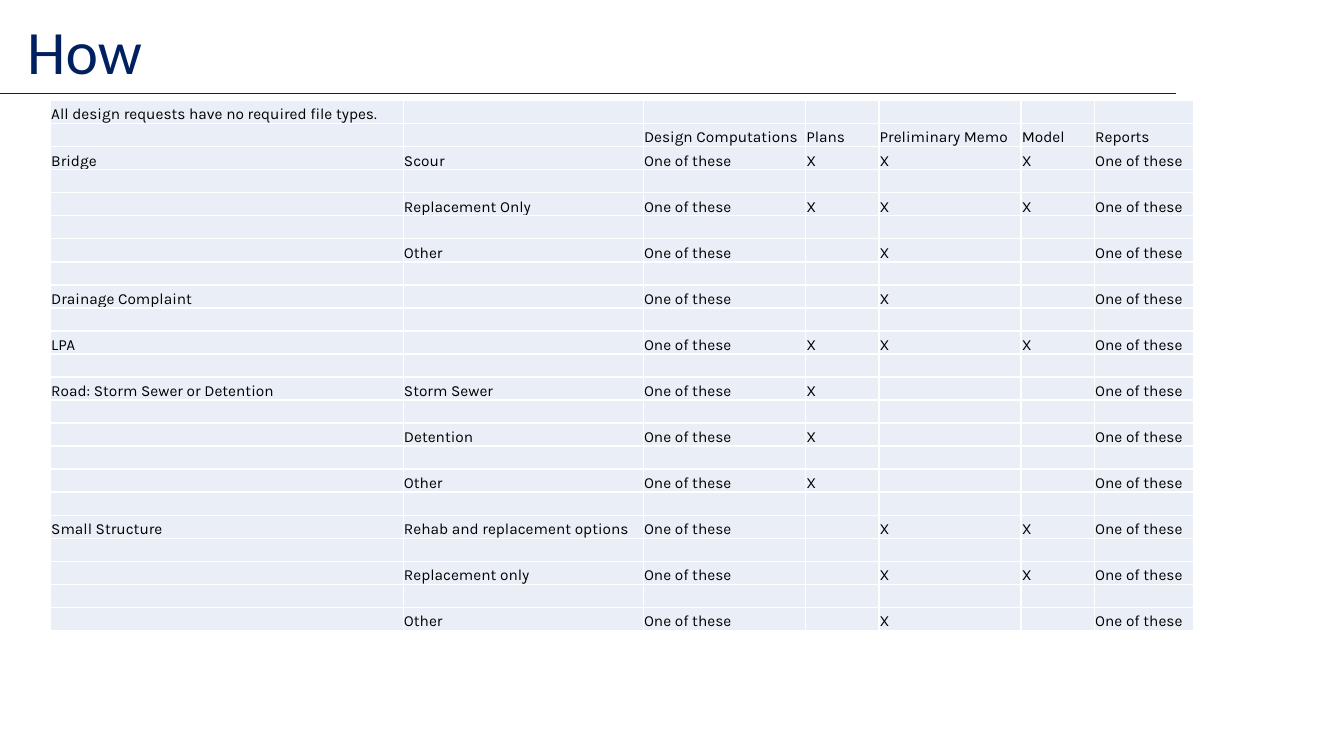
from dataclasses import dataclass

from lxml import etree
from pptx import Presentation
from pptx.dml.color import RGBColor
from pptx.enum.shapes import MSO_CONNECTOR
from pptx.enum.text import MSO_ANCHOR, MSO_AUTO_SIZE, PP_ALIGN
from pptx.oxml import parse_xml
from pptx.oxml.ns import nsdecls, qn
from pptx.slide import Slide
from pptx.table import _Cell
from pptx.text.text import TextFrame
from pptx.util import Cm, Pt

STRAIGHT = MSO_CONNECTOR.STRAIGHT
BOTTOM = MSO_ANCHOR.BOTTOM
LEFT = PP_ALIGN.LEFT
NO_FIT = MSO_AUTO_SIZE.NONE

NAVY = RGBColor(0x00, 0x20, 0x60)
BLACK = RGBColor(0x00, 0x00, 0x00)
PALE = RGBColor(0xEA, 0xEF, 0xF7)
WHITE = RGBColor(0xFF, 0xFF, 0xFF)

TEXT_SIZE = 11
WIDTHS = (8.89, 6.05, 4.09, 1.85, 3.58, 1.85, 2.51)
ROW_HEIGHT = 0.58
NOTE = "All design requests have no required file types."
HEADS = ("Design Computations", "Plans", "Preliminary Memo", "Model", "Reports")
EITHER = "One of these"


@dataclass
class Request:
    """A design request; marks holds the initials of its marked files."""
    kind: str
    work: str
    marks: str

    def cells(self) -> tuple[str, ...]:
        ticks = ("X" if key in self.marks else "" for key in "PMO")
        return (self.kind, self.work, EITHER, *ticks, EITHER)


# P = plans, M = preliminary memo, O = model
REQUESTS = (
    Request("Bridge", "Scour", "PMO"),
    Request("", "Replacement Only", "PMO"),
    Request("", "Other", "M"),
    Request("Drainage Complaint", "", "M"),
    Request("LPA", "", "PMO"),
    Request("Road: Storm Sewer or Detention", "Storm Sewer", "P"),
    Request("", "Detention", "P"),
    Request("", "Other", "P"),
    Request("Small Structure", "Rehab and replacement options", "MO"),
    Request("", "Replacement only", "MO"),
    Request("", "Other", "M"),
)


def write(frame: TextFrame, text: str, *, font: str, size: float,
          color: RGBColor, spacing: float = 1.0) -> None:
    para = frame.paragraphs[0]
    para.alignment = LEFT
    para.line_spacing = spacing
    if not text:
        # The end mark keeps an empty row from growing to the default size.
        etree.SubElement(para._p, qn("a:endParaRPr"), sz=str(size * 100))
        return
    run = para.add_run()
    run.text = text
    run.font.name = font
    run.font.size = Pt(size)
    run.font.color.rgb = color


def add_title(slide: Slide) -> None:
    title = slide.shapes.title
    title.left, title.top = Cm(0.43), Cm(0)
    title.width, title.height = Cm(33.02), Cm(2.34)
    frame = title.text_frame
    frame.auto_size = NO_FIT
    frame.vertical_anchor = BOTTOM
    write(frame, "How", font="Calibri", size=44, color=NAVY, spacing=0.9)


def add_rule(slide: Slide) -> None:
    """Draw the line under the title."""
    rule = slide.shapes.add_connector(STRAIGHT, Cm(0), Cm(2.34), Cm(29.64), Cm(2.34))
    rule.line.color.rgb = NAVY
    rule.line.width = Pt(0.5)
    etree.SubElement(rule._element.spPr, qn("a:effectLst"))


def fill_cell(cell: _Cell, text: str) -> None:
    cell.margin_left = cell.margin_right = cell.margin_top = Cm(0.02)
    cell.margin_bottom = Cm(0)
    cell.vertical_anchor = BOTTOM
    props = cell._tc.get_or_add_tcPr()
    for side in "LRTB":
        props.append(parse_xml(
            f'<a:ln{side} {nsdecls("a")} w="{Pt(1)}"><a:solidFill>'
            f'<a:srgbClr val="{WHITE}"/></a:solidFill></a:ln{side}>'))
    cell.fill.solid()
    cell.fill.fore_color.rgb = PALE
    write(cell.text_frame, text, font="Karla", size=TEXT_SIZE, color=BLACK)


def add_grid(slide: Slide) -> None:
    blank = ("",) * len(WIDTHS)
    rows = [(NOTE, *blank[1:]), ("", "", *HEADS)]
    for request in REQUESTS:
        rows += [request.cells(), blank]
    rows.pop()

    table = slide.shapes.add_table(
        len(rows), len(WIDTHS), Cm(1.27), Cm(2.54),
        Cm(sum(WIDTHS)), Cm(ROW_HEIGHT * len(rows))).table
    table.first_row = table.horz_banding = False
    for column, width in zip(table.columns, WIDTHS):
        column.width = Cm(width)
    for line, texts in zip(table.rows, rows):
        line.height = Cm(ROW_HEIGHT)
        for cell, text in zip(line.cells, texts):
            fill_cell(cell, text)


def main() -> None:
    deck = Presentation()
    deck.slide_width, deck.slide_height = Cm(33.87), Cm(19.05)
    slide = deck.slides.add_slide(deck.slide_layouts[5])
    add_rule(slide)
    add_title(slide)
    add_grid(slide)
    deck.save("out.pptx")


if __name__ == "__main__":
    main()
